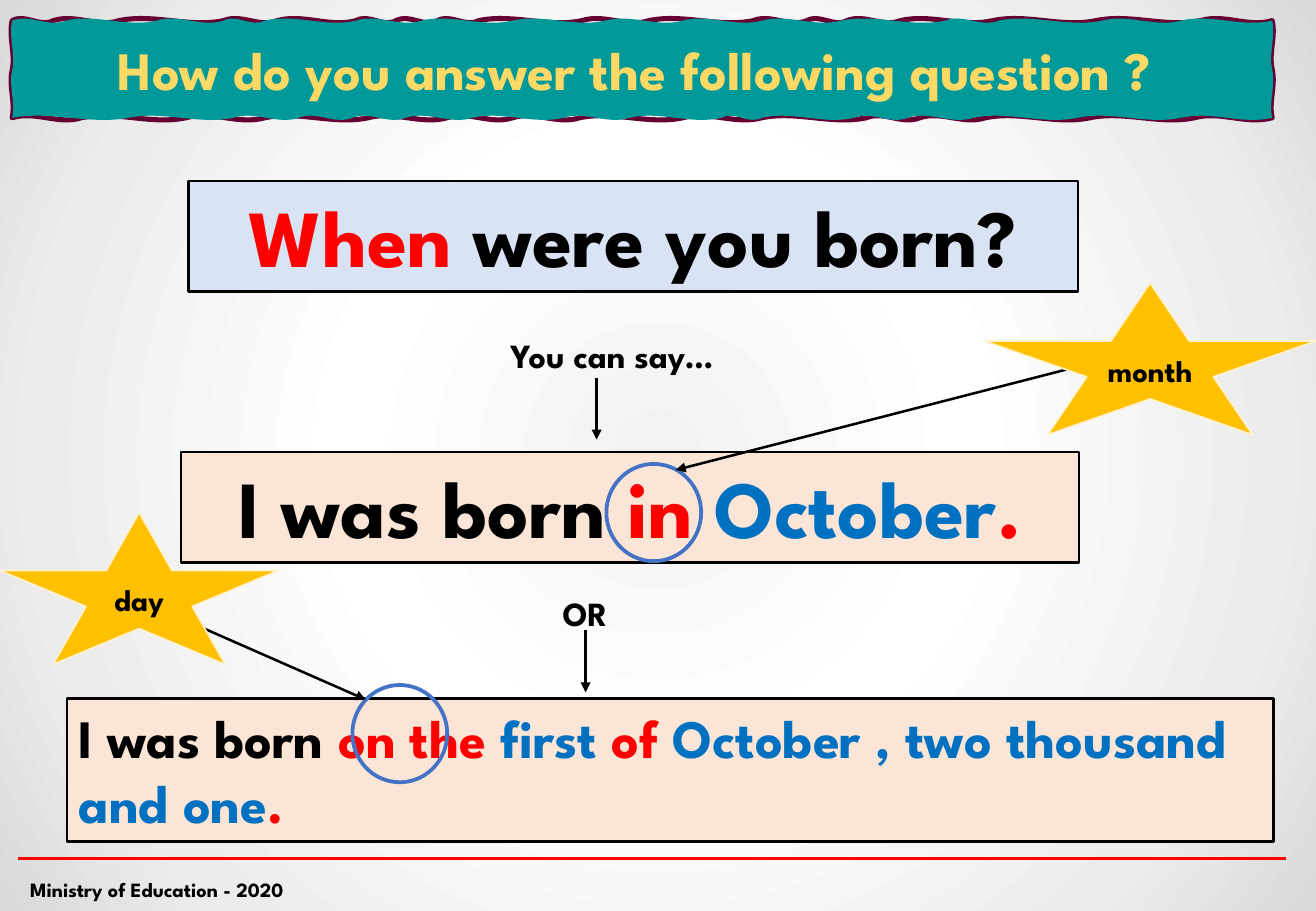
import pptx
import pptx.dml.color
import pptx.enum.shapes
import pptx.enum.text
import pptx.oxml
import pptx.oxml.ns
import pptx.util

Inches = pptx.util.Inches
Shape = pptx.enum.shapes.MSO_SHAPE
Align = pptx.enum.text.PP_ALIGN
Anchor = pptx.enum.text.MSO_ANCHOR
qn = pptx.oxml.ns.qn
NAMESPACE = pptx.oxml.ns.nsdecls("a")

COLORS = {
    "black": "000000", "red": "FF0000", "blue": "0070C0", "ring": "4472C4",
    "question": "DAE3F3", "answer": "FBE5D6", "star": "FFC000", "star_edge": "FFF2CC",
    "banner": "009999", "banner_edge": "660033", "title": "FFD966",
}


def write_text(shape, runs, size=20, align=Align.CENTER, anchor=Anchor.MIDDLE, wrap=True):
    frame = shape.text_frame
    frame.word_wrap = wrap
    frame.vertical_anchor = anchor
    paragraph = frame.paragraphs[0]
    paragraph.alignment = align
    for text, color in runs:
        run = paragraph.add_run()
        run.text = text
        run.font.name = "League Spartan"
        run.font.size = pptx.util.Pt(size)
        run.font.bold = True
        run.font.color.rgb = pptx.dml.color.RGBColor.from_string(COLORS[color])


def paint(shape, fill=None, line=None, width=1.5):
    shape.shadow.inherit = False
    if fill:
        shape.fill.solid()
        shape.fill.fore_color.rgb = pptx.dml.color.RGBColor.from_string(COLORS[fill])
    else:
        shape.fill.background()
    if line:
        shape.line.color.rgb = pptx.dml.color.RGBColor.from_string(COLORS[line])
        shape.line.width = pptx.util.Pt(width)
    else:
        shape.line.fill.background()


presentation = pptx.Presentation()
presentation.slide_width = Inches(10.83)
presentation.slide_height = Inches(7.5)
slide = presentation.slides.add_slide(presentation.slide_layouts[6])
shapes = slide.shapes

slide.background.fill.solid()
plain_fill = slide.element.find(".//" + qn("a:solidFill"))
stops = "".join(
    f'<a:gs pos="{position * 1000}"><a:srgbClr val="{color}"/></a:gs>'
    for position, color in [(0, "F2F2F2"), (39, "FFFFFF"), (78, "ECECEC"), (100, "D9D9D9")]
)
gradient = pptx.oxml.parse_xml(
    f'<a:gradFill {NAMESPACE} rotWithShape="1"><a:gsLst>{stops}</a:gsLst>'
    '<a:path path="circle"><a:fillToRect l="50000" t="50000" r="50000" b="50000"/></a:path>'
    "</a:gradFill>"
)
plain_fill.getparent().replace(plain_fill, gradient)

footer = shapes.add_textbox(Inches(0.15), Inches(7.17), Inches(2.42), Inches(0.3))
write_text(footer, [("Ministry of Education - 2020", "black")], size=12,
           align=Align.LEFT, anchor=Anchor.TOP, wrap=False)

boxes = [
    (1.55, 1.49, 7.32, 0.91, "question", 48, Align.CENTER, False,
     [("When", "red"), (" were you born?", "black")]),
    (1.49, 3.72, 7.39, 0.91, "answer", 48, Align.CENTER, False,
     [("I was born ", "black"), ("in ", "red"), ("October", "blue"), (".", "red")]),
    (0.55, 5.75, 9.93, 1.18, "answer", 32, Align.LEFT, True,
     [("I was born ", "black"), ("on the ", "red"), ("first", "blue"), (" of ", "red"),
      ("October , two thousand and one", "blue"), (".", "red")]),
]
for left, top, width, height, fill, size, align, wrap, runs in boxes:
    box = shapes.add_shape(Shape.RECTANGLE, Inches(left), Inches(top), Inches(width), Inches(height))
    paint(box, fill=fill, line="black")
    write_text(box, runs, size=size, align=align, anchor=Anchor.TOP, wrap=wrap)

LEFT, TOP, RIGHT, BOTTOM = 0.1, 0.17, 10.47, 0.97
edge_knots = (
    [0.1, 0.44, 0.98, 1.84, 2.28, 2.93, 3.26, 3.6, 3.94, 4.79, 5.34, 6.2, 6.64, 6.97,
     7.41, 8.17, 9.02, 9.88, 10.47],
    [10.47, 9.83, 8.97, 8.11, 7.57, 7.13, 6.27, 5.62, 4.77, 4.22, 3.68, 3.03, 2.18,
     1.53, 0.67, 0.1],
)
fill_knots = (
    [0.1, 0.54, 1.29, 1.84, 2.18, 2.93, 3.47, 4.22, 4.98, 5.62, 6.27, 6.92, 7.78, 8.22,
     9.07, 9.72, 10.47],
    [10.47, 9.72, 8.87, 8.01, 7.47, 7.03, 6.27, 5.94, 5.18, 4.64, 3.89, 3.34, 2.9, 2.46,
     1.92, 1.06, 0.1],
)
builder = shapes.build_freeform(Inches(LEFT), Inches(TOP))
for index, (top_knots, bottom_knots) in enumerate([edge_knots, fill_knots]):
    corners = [(x, TOP) for x in top_knots] + [(RIGHT, 0.57)]
    corners += [(x, BOTTOM) for x in bottom_knots] + [(LEFT, 0.58), (LEFT, TOP)]
    points = []
    for (x1, y1), (x2, y2) in zip(corners, corners[1:]):
        wave_x = 0 if y1 == y2 else 0.03
        wave_y = 0 if y1 != y2 else -0.06 if y1 == TOP else 0.06
        points += [(x1 + (x2 - x1) / 3 + wave_x, y1 + (y2 - y1) / 3 + wave_y),
                   (x2 - (x2 - x1) / 3 - wave_x, y2 - (y2 - y1) / 3 - wave_y),
                   (x2, y2)]
    if index:
        builder.move_to(Inches(LEFT), Inches(TOP))
    builder.add_line_segments([(Inches(x), Inches(y)) for x, y in points], close=True)
banner = builder.convert_to_shape()
paint(banner, fill="banner", line="banner_edge", width=3)
write_text(banner, [("How do you answer the following question ? ", "title")], size=32)

outline = banner.element.find(".//" + qn("a:path"))
segments = outline.findall(qn("a:lnTo"))
for first, second, third in zip(segments[::3], segments[1::3], segments[2::3]):
    curve = pptx.oxml.parse_xml(f"<a:cubicBezTo {NAMESPACE}/>")
    first.addprevious(curve)
    for segment in (first, second, third):
        curve.append(segment[0])
        outline.remove(segment)
inside = pptx.oxml.parse_xml(
    f'<a:path {NAMESPACE} w="{outline.get("w")}" h="{outline.get("h")}" stroke="0"/>')
outline.set("fill", "none")
outline.addnext(inside)
second_start = outline.findall(qn("a:moveTo"))[1]
for piece in list(outline)[outline.index(second_start):]:
    inside.append(piece)

for text, left, top in [("You can say…", 2.95, 2.52), ("OR", 2.73, 4.64)]:
    right, bottom = left + 4.17, top + 0.81
    builder = shapes.build_freeform(Inches(left), Inches(top))
    builder.add_line_segments([(Inches(x), Inches(y)) for x, y in
                               [(right, top), (right, bottom), (left, bottom)]], close=True)
    label = builder.convert_to_shape()
    paint(label)
    write_text(label, [(text, "black")])

for left, top in [(4.99, 3.82), (2.9, 5.64)]:
    ring = shapes.add_shape(Shape.OVAL, Inches(left), Inches(top), Inches(0.78), Inches(0.8))
    paint(ring, line="ring", width=2.25)

lines = [
    (0.15, 7.07, 10.58, 7.07, "red", False),
    (4.91, 3.11, 4.91, 3.62, "black", True),
    (4.82, 5.19, 4.82, 5.7, "black", True),
    (8.98, 2.99, 5.56, 3.87, "black", True),
    (1.35, 5.03, 3.01, 5.76, "black", True),
]
for x1, y1, x2, y2, color, arrow in lines:
    connector = shapes.add_connector(pptx.enum.shapes.MSO_CONNECTOR.STRAIGHT,
                                     Inches(x1), Inches(y1), Inches(x2), Inches(y2))
    connector.line.color.rgb = pptx.dml.color.RGBColor.from_string(COLORS[color])
    connector.line.width = pptx.util.Pt(1.5)
    if arrow:
        head = pptx.oxml.parse_xml(f'<a:tailEnd {NAMESPACE} type="triangle"/>')
        connector.element.spPr.find(qn("a:ln")).append(head)
    connector.element.spPr.append(pptx.oxml.parse_xml(f"<a:effectLst {NAMESPACE}/>"))

for text, left, top, width in [("month", 8.1, 2.33, 2.73), ("day", 0, 4.22, 2.29)]:
    star = shapes.add_shape(Shape.STAR_5_POINT, Inches(left), Inches(top), Inches(width), Inches(1.25))
    paint(star, fill="star", line="star_edge", width=1)
    write_text(star, [(text, "black")], size=18)

presentation.save("out.pptx")
